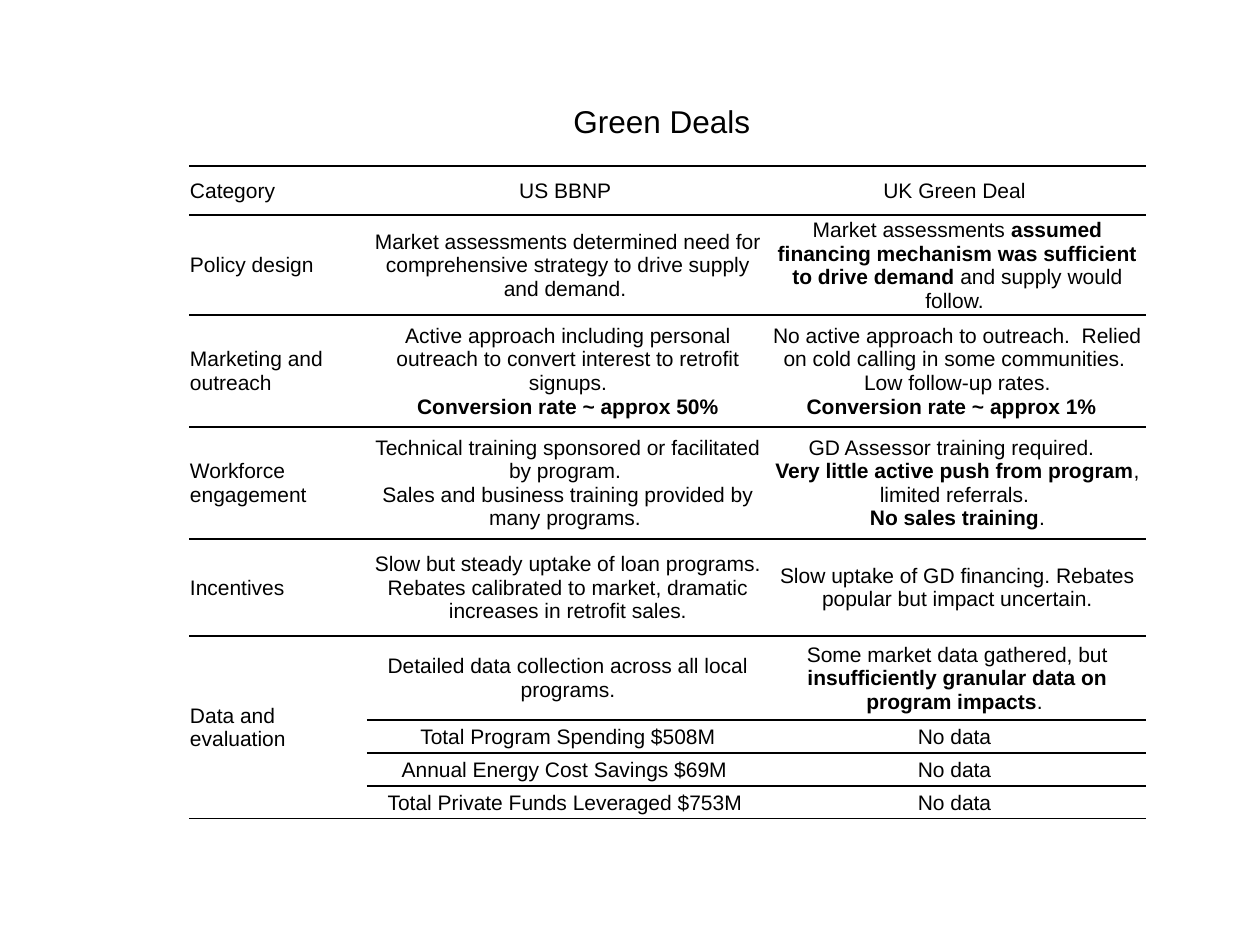
import dataclasses

import lxml.etree
import pptx
import pptx.dml.color
import pptx.enum.text
import pptx.oxml.ns
import pptx.util

PX = 914400 // 126  # EMU in one px
PLAIN_TABLE_STYLE = "{2D5ABB26-0587-4C30-8999-92F81FD0307C}"


@dataclasses.dataclass(frozen=True)
class Theme:
    font: str = "Arial"
    ink: str = "000000"
    title_size: int = 18
    body_size: int = 12
    rule_width: int = 1


class SlideBuilder:
    def __init__(self, slide, theme):
        self.slide = slide
        self.theme = theme

    def add_text(self, frame, text, size, align):
        """One paragraph per line; parts between ** marks are bold."""
        for number, line in enumerate(text.split("\n")):
            paragraph = frame.add_paragraph() if number else frame.paragraphs[0]
            paragraph.alignment = align
            for position, words in enumerate(line.split("**")):
                if not words:
                    continue
                run = paragraph.add_run()
                run.text = words
                run.font.name = self.theme.font
                run.font.size = pptx.util.Pt(size)
                run.font.bold = position % 2 == 1
                run.font.color.rgb = pptx.dml.color.RGBColor.from_string(self.theme.ink)

    def title(self, text, left, top, width, height):
        box = self.slide.shapes.add_textbox(left * PX, top * PX, width * PX, height * PX)
        box.text_frame.word_wrap = True
        self.add_text(box.text_frame, text, self.theme.title_size,
                      pptx.enum.text.PP_ALIGN.LEFT)

    def rule(self, cell, side):
        """Draw a horizontal border; lines come before the fill in a cell."""
        qn = pptx.oxml.ns.qn
        line = lxml.etree.Element(qn("a:" + side))
        line.set("w", str(pptx.util.Pt(self.theme.rule_width)))
        fill = lxml.etree.SubElement(line, qn("a:solidFill"))
        lxml.etree.SubElement(fill, qn("a:srgbClr")).set("val", self.theme.ink)
        cell._tc.get_or_add_tcPr().insert(0, line)

    def table(self, rows, left, top, widths, heights, merged):
        table = self.slide.shapes.add_table(
            len(rows), len(widths), left * PX, top * PX,
            sum(widths) * PX, sum(heights) * PX).table
        table.first_row = table.horz_banding = False
        table._tbl.tblPr.find(pptx.oxml.ns.qn("a:tableStyleId")).text = PLAIN_TABLE_STYLE
        for column, width in zip(table.columns, widths):
            column.width = width * PX
        for row, height in zip(table.rows, heights):
            row.height = height * PX
        first, last = merged
        table.cell(*first).merge(table.cell(*last))
        for r, texts in enumerate(rows):
            for c, text in enumerate(texts):
                self.cell(table.cell(r, c), text, c == 0, r == len(rows) - 1)

    def cell(self, cell, text, is_label, is_last):
        cell.fill.background()
        cell.vertical_anchor = pptx.enum.text.MSO_ANCHOR.MIDDLE
        cell.margin_left = cell.margin_right = cell.margin_top = PX
        cell.margin_bottom = 0
        # Inside a merged cell only the outer edges carry a rule
        if is_last or not cell.is_spanned:
            self.rule(cell, "lnB")
        if not cell.is_spanned:
            self.rule(cell, "lnT")
            align = pptx.enum.text.PP_ALIGN
            self.add_text(cell.text_frame, text, self.theme.body_size,
                          align.LEFT if is_label else align.CENTER)


COMPARISON = [
    ("Category", "US BBNP ", "UK Green Deal "),
    ("Policy design",
     "Market assessments determined need for comprehensive strategy to drive "
     "supply and demand. ",
     "Market assessments **assumed financing mechanism was sufficient to drive "
     "demand **and supply would follow. "),
    ("Marketing and outreach",
     "Active approach including personal outreach to convert interest to retrofit "
     "signups.\n**Conversion rate ~ approx 50%**",
     "No active approach to outreach.  Relied on cold calling in some communities.  "
     "Low follow-up rates.\n**Conversion rate ~ approx 1%  **"),
    ("Workforce engagement",
     "Technical training sponsored or facilitated by program. \n"
     "Sales and business training provided by many programs. ",
     "GD Assessor training required.  \n"
     "**Very little active push from program**, limited referrals. \n"
     "**No sales training**."),
    ("Incentives",
     "Slow but steady uptake of loan programs. Rebates calibrated to market, "
     "dramatic increases in retrofit sales.",
     "Slow uptake of GD financing. Rebates popular but impact uncertain."),
    ("Data and evaluation",
     "Detailed data collection across all local programs.",
     "Some market data gathered, but **insufficiently granular data on program "
     "impacts**. "),
    ("", "Total Program Spending $508M", "No data "),
    ("", " Annual Energy Cost Savings $69M  ", "No data "),
    ("", "Total Private Funds Leveraged $753M ", "No data "),
]


def main():
    deck = pptx.Presentation()
    deck.slide_width = pptx.util.Inches(10)
    deck.slide_height = pptx.util.Inches(7.5)
    builder = SlideBuilder(deck.slides.add_slide(deck.slide_layouts[6]), Theme())

    # Comparison of the two programs
    builder.table(COMPARISON, left=189, top=166, widths=[178, 402, 377],
                  heights=[49, 100, 112, 112, 97, 84] + [33] * 3,
                  merged=((5, 0), (8, 0)))

    # Heading
    builder.title("Green Deals", left=561, top=96, width=474, height=50)

    deck.save("out.pptx")


if __name__ == "__main__":
    main()
